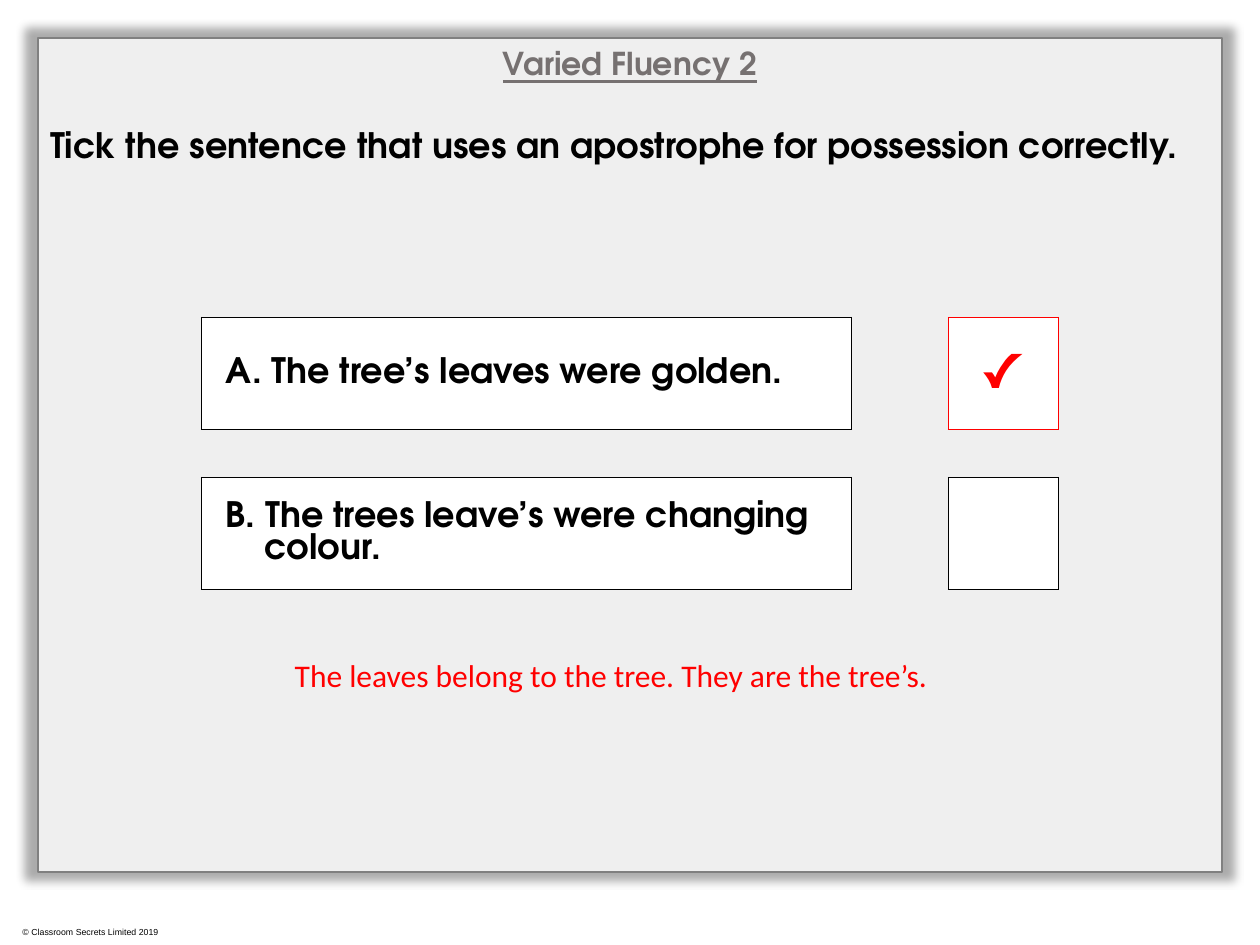
import pptx
import pptx.dml.color
import pptx.enum.shapes
import pptx.enum.text
import pptx.oxml
import pptx.oxml.ns
import pptx.util
from pptx.util import Inches

HEAD_FONT = "TeX Gyre Adventor"
BLACK, WHITE, RED, GREY = "000000", "FFFFFF", "FF0000", "767171"
NO_STYLE = "{2D5ABB26-0587-4C30-8999-92F81FD0307C}"
CENTER = pptx.enum.text.PP_ALIGN.CENTER
LEFT = pptx.enum.text.PP_ALIGN.LEFT


def rgb(value):
    """Turn a hex string into a colour."""
    return pptx.dml.color.RGBColor.from_string(value)


def xml(text):
    """Parse a drawing element with the a: prefix declared."""
    return pptx.oxml.parse_xml(text.replace(" ", f' {pptx.oxml.ns.nsdecls("a")} ', 1))


def add_run(p, text, size, color, font=HEAD_FONT, bold=True, underline=False):
    """Add one formatted run to a paragraph."""
    r = p.add_run()
    r.text = text
    r.font.name, r.font.size = font, pptx.util.Pt(size)
    r.font.bold, r.font.underline = bold, underline
    r.font.color.rgb = rgb(color)


def add_panel(s):
    """Add the translucent panel with its soft shadow."""
    sp = s.shapes.add_shape(pptx.enum.shapes.MSO_SHAPE.RECTANGLE,
                            Inches(0.3), Inches(0.3), Inches(9.4), Inches(6.62))
    sp.fill.solid()
    sp.fill.fore_color.rgb = rgb(WHITE)
    color = sp.fill._xPr.find(".//" + pptx.oxml.ns.qn("a:srgbClr"))
    color.append(xml('<a:alpha val="82000"/>'))
    sp.line.color.rgb = rgb("808080")
    sp.line.width = pptx.util.Pt(1)
    sp._element.spPr.append(xml(
        '<a:effectLst ><a:outerShdw blurRad="63500" sx="102000" sy="102000" '
        'algn="ctr" rotWithShape="0"><a:srgbClr val="000000">'
        '<a:alpha val="40000"/></a:srgbClr></a:outerShdw></a:effectLst>'))


def set_title(s, text):
    """Place and format the title at the top of the panel."""
    sp = s.shapes.title
    sp.left, sp.top, sp.width, sp.height = map(Inches, (0.3, 0.3, 9.4, 0.42))
    tf = sp.text_frame
    tf.vertical_anchor = pptx.enum.text.MSO_ANCHOR.TOP
    p = tf.paragraphs[0]
    p.alignment, p.line_spacing = CENTER, 1.0
    add_run(p, text, 18, GREY, underline=True)
    tree = s.shapes._spTree
    tree.remove(sp._element)
    tree.append(sp._element)


def add_text(s, box, text, size, color, font, bold=False):
    """Add a text box holding one line of text."""
    tf = s.shapes.add_textbox(*map(Inches, box)).text_frame
    tf.word_wrap = True
    tf.auto_size = pptx.enum.text.MSO_AUTO_SIZE.SHAPE_TO_FIT_TEXT
    add_run(tf.paragraphs[0], text, size, color, font, bold)


def add_border(cell, side, color):
    """Draw one side of a cell."""
    cell._tc.get_or_add_tcPr().append(xml(
        f'<a:ln{side} w="12700"><a:solidFill><a:srgbClr val="{color}"/>'
        f'</a:solidFill></a:ln{side}>'))


def outline_cell(table, row, col, color):
    """Draw a box round a cell, on both sides of each shared edge."""
    edges = (("L", "R", 0, -1), ("R", "L", 0, 1), ("T", "B", -1, 0), ("B", "T", 1, 0))
    for side, facing, dr, dc in edges:
        add_border(table.cell(row, col), side, color)
        r, c = row + dr, col + dc
        if 0 <= r < len(table.rows) and 0 <= c < len(table.columns):
            add_border(table.cell(r, c), facing, color)


def fill_box(cell, text, size, color, align, hang=0):
    """Write a boxed cell, with an optional hanging indent."""
    cell.fill.solid()
    cell.fill.fore_color.rgb = rgb(WHITE)
    cell.vertical_anchor = pptx.enum.text.MSO_ANCHOR.MIDDLE
    cell.margin_left = cell.margin_right = Inches(0.19)
    cell.margin_top = cell.margin_bottom = Inches(0.08)
    p = cell.text_frame.paragraphs[0]
    p.alignment = align
    if hang:
        pPr = p._p.get_or_add_pPr()
        pPr.set("marL", str(Inches(hang)))
        pPr.set("indent", str(-Inches(hang)))
    if text:
        add_run(p, text, size, color)


def add_choices(s, choices):
    """Add the table of sentences and tick boxes, with gaps between them."""
    widths, heights = (5.16, 0.77, 0.87), (0.89, 0.38, 0.89)
    frame = s.shapes.add_table(3, 3, Inches(1.6), Inches(2.52),
                               Inches(sum(widths)), Inches(sum(heights)))
    table = frame.table
    table.first_row = table.horz_banding = False
    table._tbl.tblPr.find(pptx.oxml.ns.qn("a:tableStyleId")).text = NO_STYLE
    for column, width in zip(table.columns, widths):
        column.width = Inches(width)
    for row, height in zip(table.rows, heights):
        row.height = Inches(height)
    for i, (sentence, tick, color, hang) in enumerate(choices):
        outline_cell(table, 2 * i, 0, BLACK)
        outline_cell(table, 2 * i, 2, color)
    for cell in table.iter_cells():
        cell.fill.background()
        cell.margin_top = cell.margin_bottom = 0
    for i, (sentence, tick, color, hang) in enumerate(choices):
        fill_box(table.cell(2 * i, 0), sentence, 20, BLACK, LEFT, hang)
        fill_box(table.cell(2 * i, 2), tick, 30, color, CENTER)


def main():
    """Build the slide and save it."""
    prs = pptx.Presentation()
    prs.slide_width, prs.slide_height = Inches(10), Inches(7.5)
    s = prs.slides.add_slide(prs.slide_layouts[5])
    add_text(s, (0.08, 7.31, 1.3, 0.19), "© Classroom Secrets Limited 2019",
             5, BLACK, "Arial")
    add_panel(s)
    set_title(s, "Varied Fluency 2")
    add_text(s, (0.3, 0.93, 9.4, 0.43),
             "Tick the sentence that uses an apostrophe for possession correctly.",
             20, BLACK, HEAD_FONT, True)
    add_choices(s, (
        ("A. The tree’s leaves were golden.", "✓", RED, 0),
        ("B. The trees leave’s were changing colour.", "", BLACK, 0.31),
    ))
    add_text(s, (2.24, 5.16, 7.85, 0.4),
             "The leaves belong to the tree. They are the tree’s.", 18, RED, "Calibri")
    prs.save("out.pptx")


if __name__ == "__main__":
    main()
